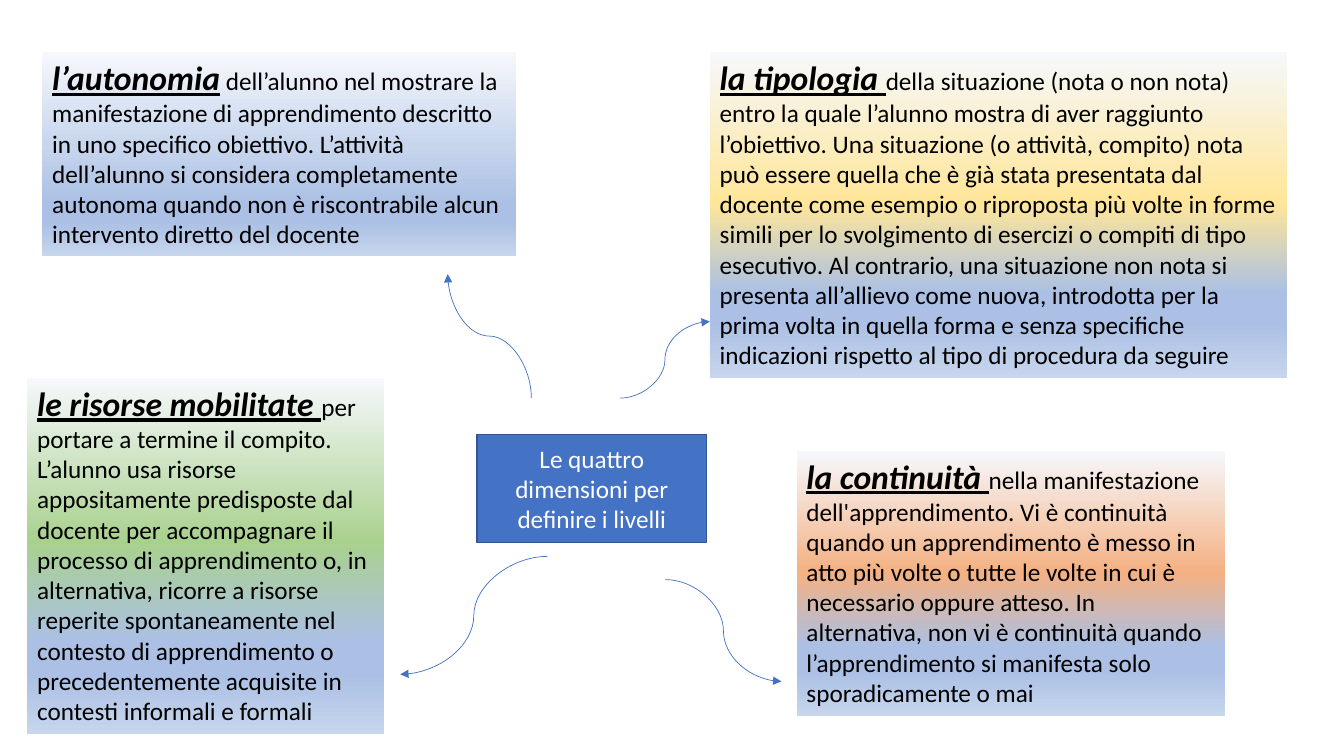
from dataclasses import dataclass

from lxml.etree import SubElement
from pptx import Presentation
from pptx.dml.color import RGBColor
from pptx.enum.shapes import MSO_CONNECTOR, MSO_SHAPE
from pptx.enum.text import MSO_ANCHOR, MSO_AUTO_SIZE, PP_ALIGN
from pptx.oxml.ns import qn
from pptx.util import Pt

EMU_PER_PX = 9144


@dataclass(frozen=True)
class Theme:
    """Colours, font and sizes of the slide."""
    font: str = "Calibri"
    heading_size: int = 24
    body_size: int = 18
    ink: str = "000000"
    paper: str = "FFFFFF"
    accent: str = "4472C4"
    accent_edge: str = "325491"
    pale: str = "F6F8FC"
    mist: str = "C7D5ED"
    haze: str = "ABC0E4"
    yellow: str = "FFE699"
    green: str = "A9D18E"
    orange: str = "F4B183"


THEME = Theme()

DIMENSIONS = [
    ((42, 52, 470, 202), THEME.mist, "l’autonomia",
     " dell’alunno nel mostrare la manifestazione di apprendimento descritto in uno "
     "specifico obiettivo. L’attività dell’alunno si considera completamente autonoma "
     "quando non è riscontrabile alcun intervento diretto del docente"),
    ((704, 52, 573, 323), THEME.yellow, "la tipologia ",
     "della situazione (nota o non nota) entro la quale l’alunno mostra di aver raggiunto "
     "l’obiettivo. Una situazione (o attività, compito) nota può essere quella che è già "
     "stata presentata dal docente come esempio o riproposta più volte in forme simili per "
     "lo svolgimento di esercizi o compiti di tipo esecutivo. Al contrario, una situazione "
     "non nota si presenta all’allievo come nuova, introdotta per la prima volta in quella "
     "forma e senza specifiche indicazioni rispetto al tipo di procedura da seguire"),
    ((27, 375, 354, 353), THEME.green, "le risorse mobilitate ",
     "per portare a termine il compito. L’alunno usa risorse appositamente predisposte dal "
     "docente per accompagnare il processo di apprendimento o, in alternativa, ricorre a "
     "risorse reperite spontaneamente nel contesto di apprendimento o precedentemente "
     "acquisite in contesti informali e formali"),
    ((790, 447, 425, 263), THEME.orange, "la continuità ",
     "nella manifestazione dell'apprendimento. Vi è continuità quando un apprendimento è "
     "messo in atto più volte o tutte le volte in cui è necessario oppure atteso. In "
     "alternativa, non vi è continuità quando l’apprendimento si manifesta solo "
     "sporadicamente o mai"),
]

CENTRE = ((473, 431, 228, 107), "Le quattro dimensioni per definire i livelli")

ARROWS = [
    ((660, 575, 775, 676), 0),
    ((543, 552, 397, 669), 0),
    ((424, 375, 547, 292), 270),
    ((615, 395, 704, 319), 0),
]


def px(*lengths):
    """Turn pixel lengths into EMU."""
    return [length * EMU_PER_PX for length in lengths]


def rgb(colour):
    """Turn a hex string into a colour."""
    return RGBColor.from_string(colour)


def add_span(para, text, size, colour, emphasis=None):
    """Add one run of text to a paragraph."""
    span = para.add_run()
    span.text = text
    font = span.font
    font.name, font.size = THEME.font, Pt(size)
    font.color.rgb = rgb(colour)
    font.bold = font.italic = font.underline = emphasis


def fill_with_gradient(shape, tint):
    """Fill a shape from top to bottom, with the tint near the middle."""
    shape.fill.gradient()
    shape.fill.gradient_angle = 270
    stop_list = next(shape._element.spPr.iter(qn("a:gsLst")))
    for stop in list(stop_list):
        stop_list.remove(stop)
    stops = [(0, THEME.pale), (46, tint), (74, THEME.haze), (83, THEME.haze), (100, THEME.mist)]
    for percent, colour in stops:
        stop = SubElement(stop_list, qn("a:gs"), pos=str(percent * 1000))
        SubElement(stop, qn("a:srgbClr"), val=colour)


def add_dimension(page, box, tint, heading, body):
    """Add one gradient panel with its heading and description."""
    panel = page.shapes.add_textbox(*px(*box))
    fill_with_gradient(panel, tint)
    frame = panel.text_frame
    frame.word_wrap = True
    frame.auto_size = MSO_AUTO_SIZE.SHAPE_TO_FIT_TEXT
    para = frame.paragraphs[0]
    add_span(para, heading, THEME.heading_size, THEME.ink, True)
    add_span(para, body, THEME.body_size, THEME.ink)


def add_centre(page, box, label):
    """Add the central process box."""
    shape = page.shapes.add_shape(MSO_SHAPE.FLOWCHART_PROCESS, *px(*box))
    shape.shadow.inherit = False
    shape.fill.solid()
    shape.fill.fore_color.rgb = rgb(THEME.accent)
    shape.line.color.rgb = rgb(THEME.accent_edge)
    shape.line.width = Pt(1)
    frame = shape.text_frame
    frame.word_wrap = True
    frame.vertical_anchor = MSO_ANCHOR.MIDDLE
    para = frame.paragraphs[0]
    para.alignment = PP_ALIGN.CENTER
    add_span(para, label, THEME.body_size, THEME.paper)


def add_arrow(page, ends, turn):
    """Add a curved arrow, turned clockwise by the given degrees."""
    arrow = page.shapes.add_connector(MSO_CONNECTOR.CURVE, *px(*ends))
    arrow.line.color.rgb = rgb(THEME.accent)
    arrow.line.width = Pt(0.5)
    properties = arrow._element.spPr
    SubElement(properties.find(qn("a:ln")), qn("a:tailEnd"), type="triangle")
    SubElement(properties, qn("a:effectLst"))
    if turn:
        properties.find(qn("a:xfrm")).set("rot", str(turn * 60000))


def build_dimensions_slide(deck):
    """Add the slide with the four dimensions around their centre."""
    page = deck.slides.add_slide(deck.slide_layouts[6])
    for dimension in DIMENSIONS:
        add_dimension(page, *dimension)
    add_centre(page, *CENTRE)
    for arrow in ARROWS:
        add_arrow(page, *arrow)


def main():
    """Build and save the deck."""
    deck = Presentation()
    deck.slide_width, deck.slide_height = px(1333, 750)
    build_dimensions_slide(deck)
    deck.save("out.pptx")


if __name__ == "__main__":
    main()
